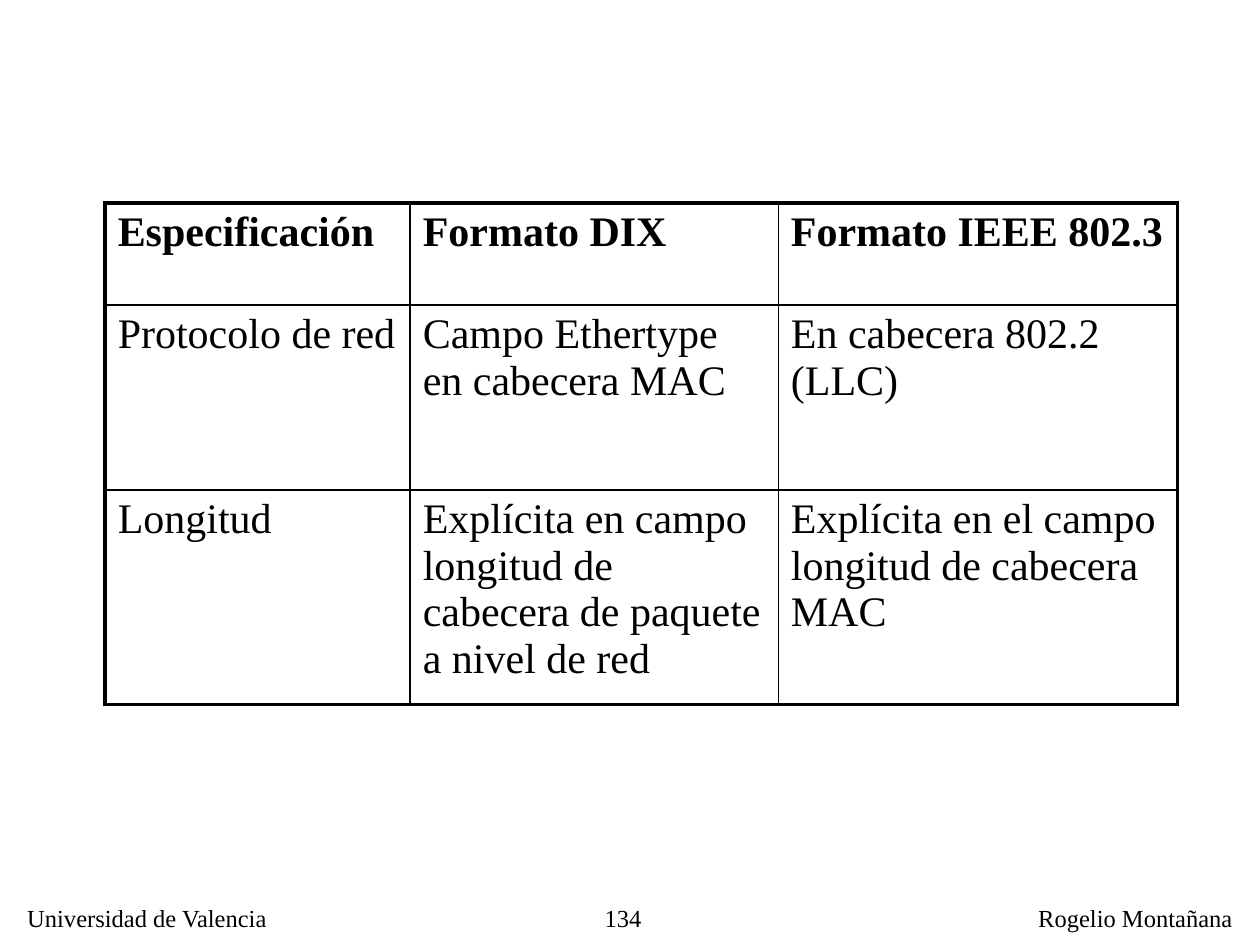
from dataclasses import dataclass

from lxml.etree import SubElement
from pptx import Presentation
from pptx.dml.color import RGBColor
from pptx.enum.text import MSO_ANCHOR, PP_ALIGN
from pptx.oxml.ns import qn
from pptx.util import Cm, Pt


@dataclass(frozen=True)
class Theme:
    font: str = "Times New Roman"
    ink: str = "000000"
    paper: str = "FFFFFF"
    table_size: int = 24
    footer_size: int = 14
    outer_border: float = 2.25
    inner_border: float = 1


def write_text(frame, text, *, theme, size, bold=False, align=PP_ALIGN.LEFT):
    paragraph = frame.paragraphs[0]
    paragraph.text = text
    paragraph.alignment = align
    font = paragraph.runs[0].font
    font.name = theme.font
    font.size = Pt(size)
    font.bold = bold
    font.color.rgb = RGBColor.from_string(theme.ink)


class SlideBuilder:
    def __init__(self, slide, theme):
        self.slide = slide
        self.theme = theme
        fill = slide.background.fill
        fill.solid()
        fill.fore_color.rgb = RGBColor.from_string(theme.paper)

    def footer(self, text, left, width, *, wrap=False, align=PP_ALIGN.LEFT):
        shape = self.slide.shapes.add_textbox(Cm(left), Cm(18.08), Cm(width), Cm(0.84))
        shape.text_frame.word_wrap = wrap
        write_text(shape.text_frame, text, theme=self.theme,
                   size=self.theme.footer_size, align=align)

    def border(self, cell, side, outer):
        width = self.theme.outer_border if outer else self.theme.inner_border
        properties = cell._tc.get_or_add_tcPr()
        line = SubElement(properties, qn(f"a:ln{side}"), w=str(Pt(width)))
        fill = SubElement(line, qn("a:solidFill"))
        SubElement(fill, qn("a:srgbClr"), val=self.theme.ink)

    def table(self, rows, left, top, widths, heights):
        table = self.slide.shapes.add_table(
            len(heights), len(widths), Cm(left), Cm(top),
            Cm(sum(widths)), Cm(sum(heights))).table
        table.first_row = False
        table.horz_banding = False
        for column, width in zip(table.columns, widths):
            column.width = Cm(width)
        for row, height in zip(table.rows, heights):
            row.height = Cm(height)
        last_row, last_column = len(heights) - 1, len(widths) - 1
        for row_index, texts in enumerate(rows):
            for column_index, text in enumerate(texts):
                cell = table.cell(row_index, column_index)
                cell.vertical_anchor = MSO_ANCHOR.TOP
                write_text(cell.text_frame, text, theme=self.theme,
                           size=self.theme.table_size, bold=row_index == 0)
                self.border(cell, "L", column_index == 0)
                self.border(cell, "R", column_index == last_column)
                self.border(cell, "T", row_index == 0)
                self.border(cell, "B", row_index == last_row)
                cell.fill.background()


def main():
    presentation = Presentation()
    presentation.slide_width = Cm(25.4)
    presentation.slide_height = Cm(19.05)
    slide = presentation.slides.add_slide(presentation.slide_layouts[6])
    builder = SlideBuilder(slide, Theme())

    builder.footer("134", 10.49, 2.69, wrap=True, align=PP_ALIGN.RIGHT)
    builder.footer("Universidad de Valencia", 0.3, 5.41)
    builder.footer("Rogelio Montañana", 20.68, 4.42)

    rows = [
        ("Especificación", "Formato DIX", "Formato IEEE 802.3"),
        ("Protocolo de red", "Campo Ethertype en cabecera MAC",
         "En cabecera 802.2 (LLC)"),
        ("Longitud",
         "Explícita en campo longitud de cabecera de paquete a nivel de red",
         "Explícita en el campo longitud de cabecera MAC"),
    ]
    builder.table(rows, 2.12, 4.09, widths=(6.15, 7.42, 8.05),
                  heights=(2.06, 3.73, 4.32))

    presentation.save("out.pptx")


if __name__ == "__main__":
    main()
